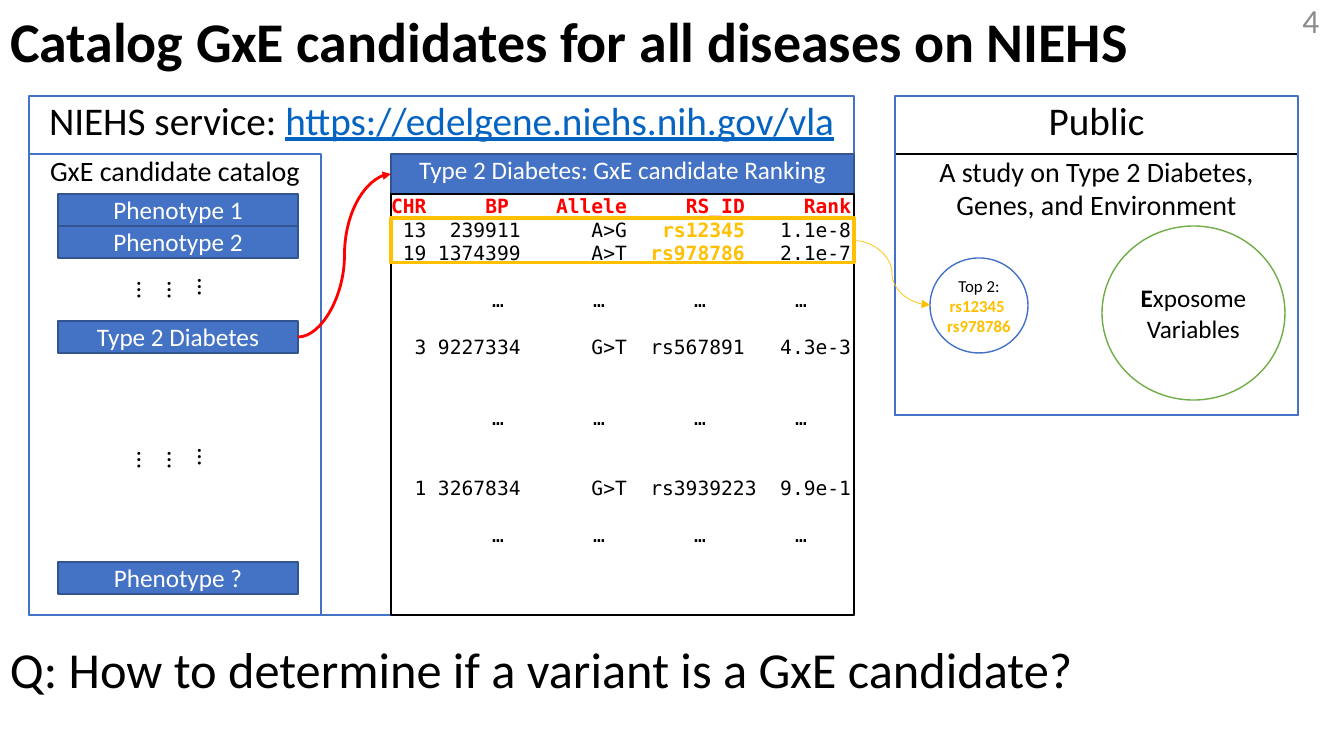
from lxml.etree import SubElement
from pptx import Presentation
from pptx.dml.color import RGBColor
from pptx.enum.shapes import MSO_CONNECTOR, MSO_SHAPE
from pptx.enum.text import MSO_ANCHOR, PP_ALIGN
from pptx.oxml.ns import qn
from pptx.util import Pt

BLUE = RGBColor(0x44, 0x72, 0xC4)
NAVY = RGBColor(0x32, 0x54, 0x91)
LINK = RGBColor(0x05, 0x63, 0xC1)
GOLD = RGBColor(0xFF, 0xC0, 0x00)
GREEN = RGBColor(0x70, 0xAD, 0x47)
RED = RGBColor(0xFF, 0x00, 0x00)
GRAY = RGBColor(0x8C, 0x8C, 0x8C)
BLACK = RGBColor(0, 0, 0)
WHITE = RGBColor(0xFF, 0xFF, 0xFF)
SANS, MONO = "Calibri", "DejaVu Sans Mono"
LEFT, MID = PP_ALIGN.LEFT, PP_ALIGN.CENTER

WIDE, HIGH = 1344, 756
SCALE = 12192000 / WIDE

TITLE = "Catalog GxE candidates for all diseases on NIEHS"
QUERY = "Q: How to determine if a variant is a GxE candidate?"
# A paragraph is a list of (text, accent); an accent colour also means bold.
SERVICE = [("NIEHS service: ", None), ("https://edelgene.niehs.nih.gov/vla", LINK)]
STUDY = [[("A study on Type 2 Diabetes,", None)], [("Genes, and Environment", None)]]
EXPOSOME = [[("E", BLACK), ("xposome", None)], [("Variables", None)]]
TOP = [[("Top 2: ", None), ("rs12345 ", GOLD)], [("rs978786", GOLD)]]
DOTS = [[("… ", None)], [("…", None)], [("…", None)]]
PHENOTYPES = [("Phenotype 1", 194), ("Phenotype 2", 226),
              ("Type 2 Diabetes", 321), ("Phenotype ?", 562)]
DOT_TOPS = [274, 444]

# Ranking rows: lines skipped above, right edge of each column in letters, runs
EDGES = (3, 11, 20, 30, 39)
MORE = [("\t…\t…\t…\t…", None)]
RANKING = [
    (0, (10, 20, 30, 39), [("CHR\tBP\tAllele\tRS_ID\tRank", RED)]),
    (0, EDGES, [("\t13\t239911\tA>G\t", None), ("rs12345", GOLD), ("\t1.1e-8", None)]),
    (0, EDGES, [("\t19\t1374399\tA>T\t", None), ("rs978786", GOLD), ("\t2.1e-7", None)]),
    (1, (), MORE),
    (1, EDGES, [("\t3\t9227334\tG>T\trs567891\t4.3e-3", None)]),
    (2, (), MORE),
    (2, (3, 11, 20, 31, 39), [("\t1\t3267834\tG>T\trs3939223\t9.9e-1", None)]),
    (1, (), MORE),
]
LETTER = 11.8
PITCH = 16.8


def emu(px):
    return round(px * SCALE)


def write(shape, paras, size, color=BLACK, align=MID, face=SANS,
          anchor=MSO_ANCHOR.TOP, inset=True):
    frame = shape.text_frame
    frame.word_wrap = True
    frame.vertical_anchor = anchor
    if not inset:
        frame.margin_left = frame.margin_right = 0
        frame.margin_top = frame.margin_bottom = 0
    for i, runs in enumerate(paras):
        para = frame.add_paragraph() if i else frame.paragraphs[0]
        para.alignment = align
        para.font.size, para.font.name = Pt(size), face
        para.font.bold = False
        para.font.color.rgb = color
        for text, accent in runs:
            run = para.add_run()
            run.text = text
            if accent is not None:
                run.font.color.rgb = accent
                run.font.bold = True
    return frame


def draw(slide, box, line=None, fill=None, kind=MSO_SHAPE.RECTANGLE, width=1):
    shape = slide.shapes.add_shape(kind, *map(emu, box))
    shape.shadow.inherit = False
    if fill is None:
        shape.fill.background()
    else:
        shape.fill.solid()
        shape.fill.fore_color.rgb = fill
    if line is None:
        shape.line.fill.background()
    else:
        shape.line.color.rgb = line
        shape.line.width = Pt(width)
    return shape


def label(slide, box, text, size, **style):
    area = slide.shapes.add_textbox(*map(emu, box))
    write(area, [[(text, None)]], size, **style)


def bar(slide, box, text):
    shape = draw(slide, box, NAVY, BLUE)
    write(shape, [[(text, None)]], 18, WHITE, inset=False)
    return shape


def curve(slide, start, end, color, width):
    link = slide.shapes.add_connector(MSO_CONNECTOR.CURVE, *map(emu, start + end))
    link.line.color.rgb = color
    link.line.width = Pt(width)
    SubElement(link.line._get_or_add_ln(), qn("a:tailEnd"), type="triangle")
    SubElement(link._element.spPr, qn("a:effectLst"))
    return link


def set_tabs(para, edges):
    """Right-align columns at letter counts, or use inch-wide left stops."""
    stops = [(LETTER * n, "r") for n in edges] or [(101 * n, "l") for n in range(1, 5)]
    tabs = SubElement(para._p.get_or_add_pPr(), qn("a:tabLst"))
    para._p.pPr.find(qn("a:defRPr")).addprevious(tabs)
    for pos, side in stops:
        SubElement(tabs, qn("a:tab"), pos=str(emu(pos)), algn=side)


def rank(slide):
    shape = draw(slide, (391, 194, 463, 421), BLACK, WHITE)
    frame = write(shape, [runs for _, _, runs in RANKING], 14,
                  align=LEFT, face=MONO, inset=False)
    for para, (skip, edges, _) in zip(frame.paragraphs, RANKING):
        para.line_spacing = Pt(PITCH)
        para.space_before = Pt(skip * PITCH)
        set_tabs(para, edges)


def main():
    deck = Presentation()
    deck.slide_width, deck.slide_height = emu(WIDE), emu(HIGH)
    slide = deck.slides.add_slide(deck.slide_layouts[5])

    title = slide.shapes.title
    title.left, title.top, title.width, title.height = map(emu, (0, 1, WIDE, 78))
    write(title, [[(TITLE, BLACK)]], 40, align=LEFT)
    label(slide, (1279, 0, 64, 40), "4", 24, color=GRAY, anchor=MSO_ANCHOR.MIDDLE)

    service = draw(slide, (29, 96, 825, 519), BLUE)
    address = write(service, [SERVICE], 28, inset=False).paragraphs[0].runs[1]
    address.font.bold, address.font.underline = False, True

    catalog = draw(slide, (29, 154, 292, 461), BLUE)
    write(catalog, [[("GxE candidate catalog", None)]], 20, inset=False)
    bars = {name: bar(slide, (58, top, 240, 32), name) for name, top in PHENOTYPES}
    for top in DOT_TOPS:
        dots = draw(slide, (58, top, 240, 32), fill=WHITE)
        frame = write(dots, DOTS, 18, anchor=MSO_ANCHOR.MIDDLE, inset=False)
        frame._txBody.bodyPr.set("vert", "vert")

    head = bar(slide, (391, 154, 463, 40), "Type 2 Diabetes: GxE candidate Ranking")
    rank(slide)
    pick = draw(slide, (391, 218, 463, 45), GOLD, width=2.25)

    study = draw(slide, (895, 154, 403, 261), BLACK, WHITE)
    write(study, STUDY, 20, inset=False)
    public = draw(slide, (895, 96, 403, 319), BLUE)
    write(public, [[("Public", None)]], 28, inset=False)
    oval = MSO_SHAPE.OVAL
    exposome = draw(slide, (1102, 226, 183, 174), GREEN, WHITE, oval)
    write(exposome, EXPOSOME, 18, anchor=MSO_ANCHOR.MIDDLE)
    top = draw(slide, (930, 258, 98, 95), BLUE, WHITE, oval)
    write(top, TOP, 12, anchor=MSO_ANCHOR.MIDDLE, inset=False)

    rise = curve(slide, (298, 337), (391, 174), RED, 2)
    rise.begin_connect(bars["Type 2 Diabetes"], 3)
    rise.end_connect(head, 1)
    fall = curve(slide, (854, 241), (930, 305), GOLD, 0.5)
    fall.begin_connect(pick, 3)

    label(slide, (0, 633, WIDE, 72), QUERY, 36, align=LEFT)
    deck.save("out.pptx")


if __name__ == "__main__":
    main()
